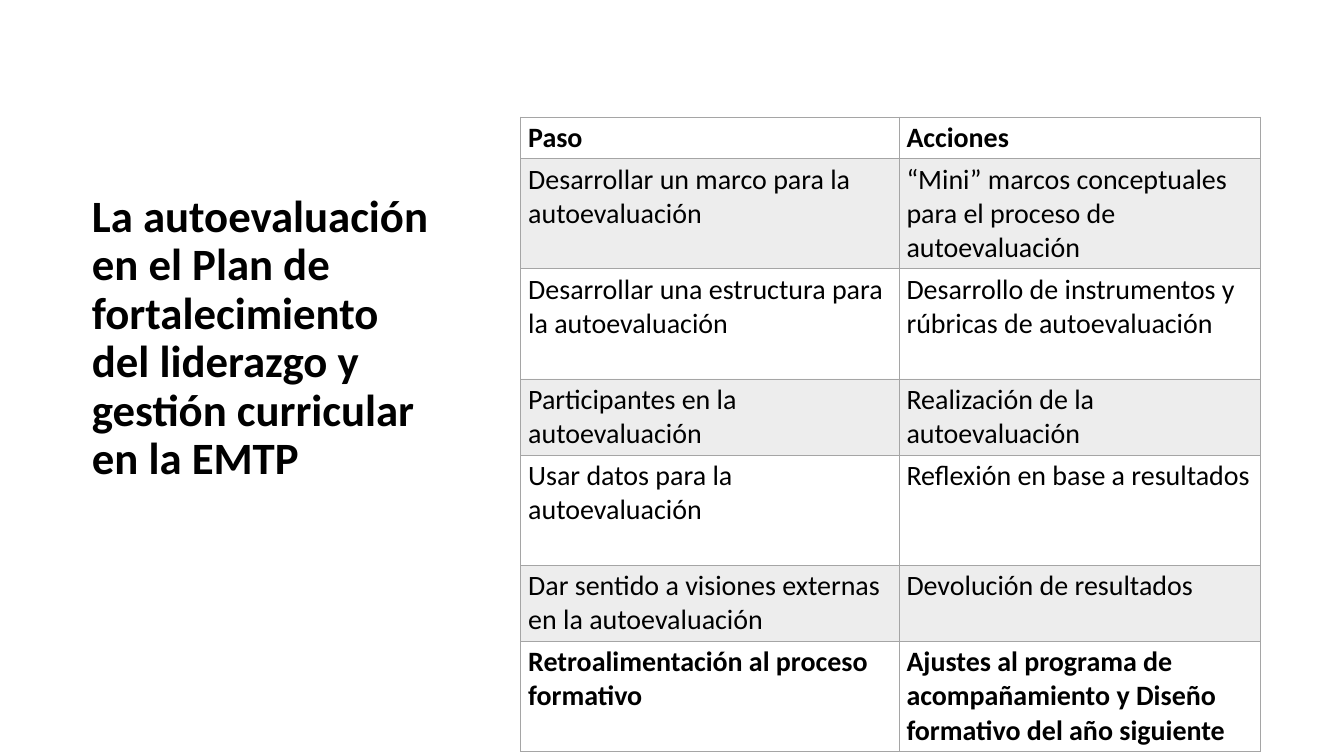
"""Build the slide on self-assessment within the EMTP leadership plan."""
from dataclasses import dataclass
from typing import NamedTuple

from lxml.etree import SubElement
from pptx import Presentation
from pptx.dml.color import RGBColor
from pptx.enum.text import MSO_ANCHOR
from pptx.oxml.ns import qn
from pptx.util import Pt

EMU_PER_PX = 9144


def px(length: int) -> int:
    return length * EMU_PER_PX


@dataclass(frozen=True)
class Theme:
    font: str = "Calibri"
    ink: str = "000000"
    gray: str = "A5A5A5"
    band_opacity: int = 20
    title_size: int = 48
    table_size: int = 30
    border: int = 1
    header_border: int = 2


class Box(NamedTuple):
    left: int
    top: int
    width: int
    height: int


class Step(NamedTuple):
    step: str
    action: str
    height: int
    bold: bool = False
    banded: bool = False


THEME = Theme()
TITLE = "La autoevaluación en el Plan de fortalecimiento del liderazgo y gestión curricular en la EMTP"
TITLE_BOX = Box(127, 396, 523, 217)
TABLE_LEFT, TABLE_TOP = 775, 174
COLUMN_WIDTHS = (563, 538)
ONE_LINE, TWO_LINES, THREE_LINES = 62, 113, 164
STEPS = (
    Step("Paso", "Acciones", ONE_LINE, bold=True),
    Step("Desarrollar un marco para la autoevaluación",
         "“Mini” marcos conceptuales para el proceso de autoevaluación", THREE_LINES, banded=True),
    Step("Desarrollar una estructura para la autoevaluación",
         "Desarrollo de instrumentos y rúbricas de autoevaluación", THREE_LINES),
    Step("Participantes en la autoevaluación",
         "Realización de la autoevaluación", TWO_LINES, banded=True),
    Step("Usar datos para la autoevaluación",
         "Reflexión en base a resultados", THREE_LINES),
    Step("Dar sentido a visiones externas en la autoevaluación",
         "Devolución de resultados", TWO_LINES, banded=True),
    Step("Retroalimentación al proceso formativo",
         "Ajustes al programa de acompañamiento y Diseño formativo del año siguiente",
         THREE_LINES, bold=True),
)


def add_span(para, text: str, size: int, bold: bool) -> None:
    span = para.add_run()
    span.text = text
    span.font.name = THEME.font
    span.font.size = Pt(size)
    span.font.bold = bold
    span.font.color.rgb = RGBColor.from_string(THEME.ink)


def add_title(page, box: Box) -> None:
    frame = page.shapes.add_textbox(*map(px, box)).text_frame
    frame.word_wrap = True
    frame.vertical_anchor = MSO_ANCHOR.MIDDLE
    para = frame.paragraphs[0]
    para.line_spacing = 0.9
    add_span(para, TITLE, THEME.title_size, True)


def add_border(cell, side: str, width: int) -> None:
    properties = cell._tc.get_or_add_tcPr()
    line = SubElement(properties, qn(f"a:ln{side}"), w=str(Pt(width)))
    fill = SubElement(line, qn("a:solidFill"))
    SubElement(fill, qn("a:srgbClr"), val=THEME.gray)


def fill_cell(cell, banded: bool) -> None:
    if not banded:
        cell.fill.background()
        return
    cell.fill.solid()
    cell.fill.fore_color.rgb = RGBColor.from_string(THEME.gray)
    color = cell._tc.tcPr.find(f"{qn('a:solidFill')}/{qn('a:srgbClr')}")
    SubElement(color, qn("a:alpha"), val=str(THEME.band_opacity * 1000))


def add_steps_table(page, steps: tuple[Step, ...]) -> None:
    height = sum(step.height for step in steps)
    box = Box(TABLE_LEFT, TABLE_TOP, sum(COLUMN_WIDTHS), height)
    table = page.shapes.add_table(len(steps), len(COLUMN_WIDTHS), *map(px, box)).table
    table.first_row = table.horz_banding = False
    for column, width in zip(table.columns, COLUMN_WIDTHS):
        column.width = px(width)
    for index, (row, step) in enumerate(zip(table.rows, steps)):
        row.height = px(step.height)
        for cell, text in zip(row.cells, (step.step, step.action)):
            cell.margin_left = cell.margin_right = px(11)
            cell.margin_top = cell.margin_bottom = px(6)
            add_span(cell.text_frame.paragraphs[0], text, THEME.table_size, step.bold)
            for side in "LRTB":
                heavy = (index, side) in ((0, "B"), (1, "T"))
                add_border(cell, side, THEME.header_border if heavy else THEME.border)
            fill_cell(cell, step.banded)


def main() -> None:
    deck = Presentation()
    deck.slide_width, deck.slide_height = px(2000), px(1125)
    page = deck.slides.add_slide(deck.slide_layouts[6])
    add_title(page, TITLE_BOX)
    add_steps_table(page, STEPS)
    deck.save("out.pptx")


if __name__ == "__main__":
    main()
